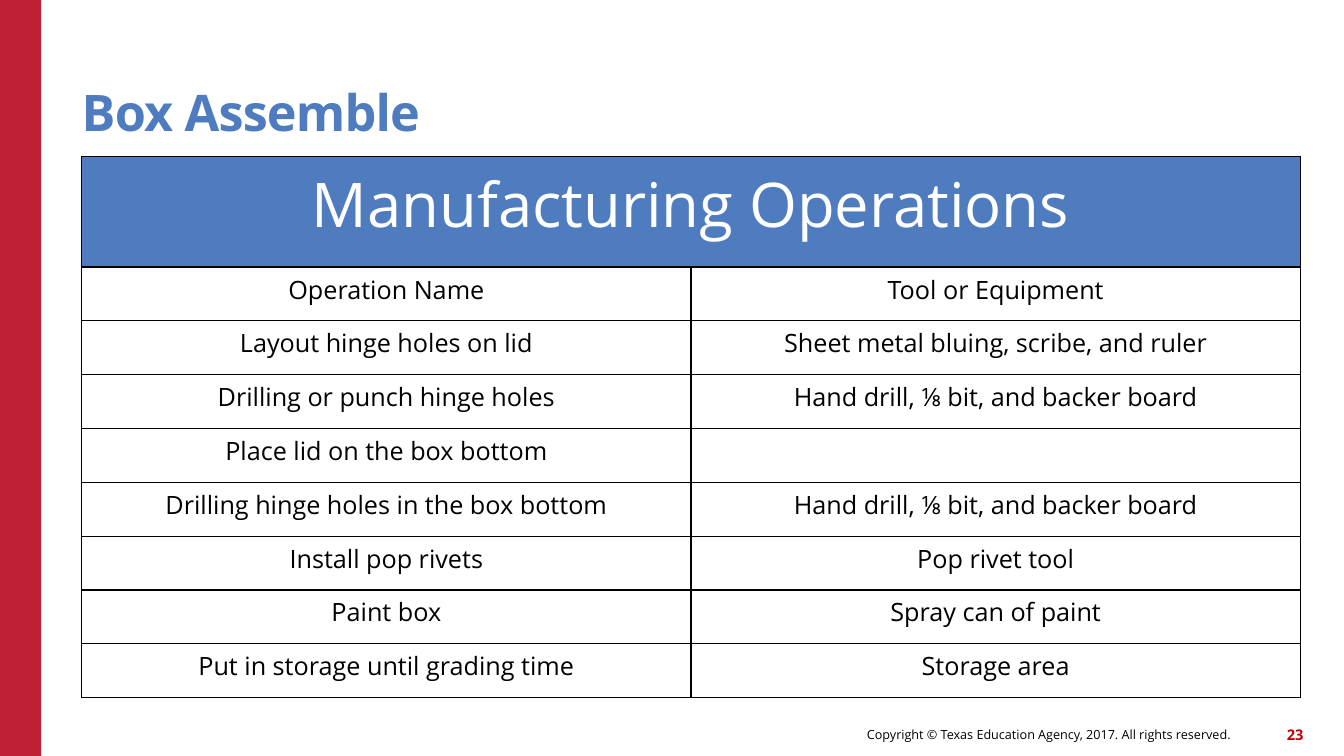
from lxml import etree
from pptx import Presentation
from pptx.dml.color import RGBColor
from pptx.enum.shapes import MSO_SHAPE
from pptx.enum.text import MSO_ANCHOR, MSO_AUTO_SIZE, PP_ALIGN
from pptx.oxml.ns import qn
from pptx.util import Cm, Pt

RECT = MSO_SHAPE.RECTANGLE
MIDDLE, BOTTOM = MSO_ANCHOR.MIDDLE, MSO_ANCHOR.BOTTOM
NO_FIT = MSO_AUTO_SIZE.NONE
LEFT, CENTER, RIGHT = PP_ALIGN.LEFT, PP_ALIGN.CENTER, PP_ALIGN.RIGHT

FONT = "Open Sans"
COLORS = {"bar": "C02033", "blue": "4E7CBE", "number": "C00000",
          "black": "000000", "white": "FFFFFF"}
WIDTH, HEIGHT = 33.87, 19.05

HEADING = "Manufacturing Operations"
OPERATIONS = [
    ("Operation Name", "Tool or Equipment"),
    ("Layout hinge holes on lid", "Sheet metal bluing, scribe, and ruler"),
    ("Drilling or punch hinge holes", "Hand drill, ⅛ bit, and backer board"),
    ("Place lid on the box bottom", ""),
    ("Drilling hinge holes in the box bottom", "Hand drill, ⅛ bit, and backer board"),
    ("Install pop rivets", "Pop rivet tool"),
    ("Paint box", "Spray can of paint"),
    ("Put in storage until grading time", "Storage area"),
]


def rgb(name):
    return RGBColor.from_string(COLORS[name])


def write(tf, text, size, color="black", bold=False, align=LEFT):
    """Put one formatted run in a text frame and return its paragraph and run."""
    p = tf.paragraphs[0]
    p.alignment = align
    r = p.add_run()
    r.text = text
    font = r.font
    font.name, font.size, font.bold = FONT, Pt(size), bold
    font.color.rgb = rgb(color)
    return p, r


def set_frame(tf, anchor):
    tf.margin_left = tf.margin_right = tf.margin_top = tf.margin_bottom = 0
    tf.word_wrap = True
    tf.auto_size = NO_FIT
    tf.vertical_anchor = anchor


def add_side_bar(s, x, y, w, h):
    sp = s.shapes.add_shape(RECT, Cm(x), Cm(y), Cm(w), Cm(h))
    sp.shadow.inherit = False
    sp.fill.solid()
    sp.fill.fore_color.rgb = rgb("bar")
    sp.line.fill.background()


def add_title(s, x, y, w, h):
    sp = s.shapes.title
    sp.left, sp.top, sp.width, sp.height = Cm(x), Cm(y), Cm(w), Cm(h)
    set_frame(sp.text_frame, BOTTOM)
    p, r = write(sp.text_frame, "Box Assemble", 36, "blue", bold=True)
    p.line_spacing = 0.9
    r.font._element.set("spc", "-60")


def add_footer(s, x, y, w, h):
    number_w, gap = 1.07, 0.84
    copyright_w = w - number_w
    parts = [
        (x, copyright_w - gap + 0.07,
         "Copyright © Texas Education Agency, 2017. All rights reserved.",
         9, "black", False),
        (x + copyright_w, number_w, "23", 10.5, "number", True),
    ]
    for left, width, text, size, color, bold in parts:
        tf = s.shapes.add_textbox(Cm(left), Cm(y), Cm(width), Cm(h)).text_frame
        set_frame(tf, MIDDLE)
        write(tf, text, size, color, bold, RIGHT)


def format_cell(cell, fill):
    # Borders come before the fill in the cell properties
    tc_pr = cell._tc.get_or_add_tcPr()
    for side in ("a:lnL", "a:lnR", "a:lnT", "a:lnB"):
        ln = etree.SubElement(tc_pr, qn(side), w=str(Pt(1)))
        solid = etree.SubElement(ln, qn("a:solidFill"))
        etree.SubElement(solid, qn("a:srgbClr"), val=COLORS["black"])
    cell.fill.solid()
    cell.fill.fore_color.rgb = rgb(fill)
    cell.margin_left = cell.margin_right = Cm(0.33)
    cell.margin_top = cell.margin_bottom = Cm(0.13)


def add_operations_table(s, x, y, w, h):
    heading_h = 2.79
    row_h = (h - heading_h) / len(OPERATIONS)
    table = s.shapes.add_table(len(OPERATIONS) + 1, 2,
                               Cm(x), Cm(y), Cm(w), Cm(h)).table
    table.horz_banding = False
    for column in table.columns:
        column.width = Cm(w / 2)
    for i, row in enumerate(table.rows):
        row.height = Cm(row_h if i else heading_h)
        for cell in row.cells:
            format_cell(cell, "white" if i else "blue")

    # Heading across both columns
    heading = table.cell(0, 0)
    heading.merge(table.cell(0, 1))
    write(heading.text_frame, HEADING, 44, "white", align=CENTER)

    # Operations and their tools
    for i, texts in enumerate(OPERATIONS, start=1):
        for j, text in enumerate(texts):
            if text:
                write(table.cell(i, j).text_frame, text, 18, align=CENTER)


def main():
    prs = Presentation()
    prs.slide_width, prs.slide_height = Cm(WIDTH), Cm(HEIGHT)
    s = prs.slides.add_slide(prs.slide_layouts[5])
    add_side_bar(s, 0, 0, 1.04, HEIGHT)
    add_footer(s, 15.6, 18.1, 17.25, 0.81)
    add_title(s, 2.06, 1.14, 27.94, 2.44)
    add_operations_table(s, 2.06, 3.94, 30.71, 13.64)
    prs.save("out.pptx")


if __name__ == "__main__":
    main()
